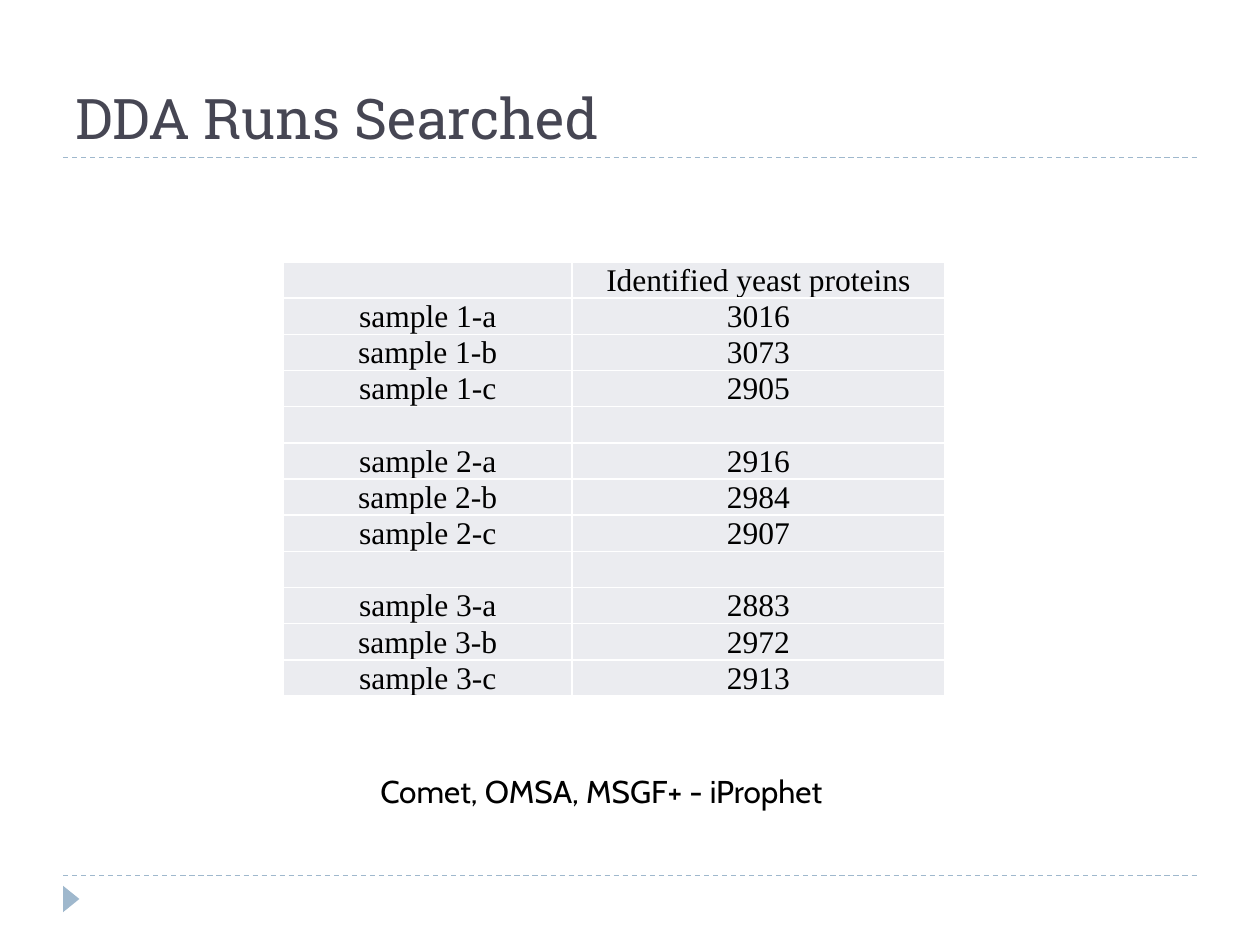
from lxml import etree
from pptx import Presentation
from pptx import util as u
from pptx.dml.color import RGBColor
from pptx.enum import dml, shapes, text
from pptx.oxml.ns import qn

INK = RGBColor(0x00, 0x00, 0x00)
SLATE = RGBColor(0x46, 0x46, 0x53)
MIST = RGBColor(0x9F, 0xB8, 0xCD)
PALE = RGBColor(0xEB, 0xEC, 0xF0)
WIDTH, HEIGHT = u.Inches(10), u.Inches(7.5)
MARGIN = WIDTH * 0.05
BODY_SIZE = u.Pt(18)
TABLE_FONT = "Times New Roman"
PROTEIN_COUNTS = [(3016, 3073, 2905), (2916, 2984, 2907), (2883, 2972, 2913)]


def style(paragraph, font_name, size, color):
    """Format every run of a paragraph."""
    for run in paragraph.runs:
        run.font.name, run.font.size = font_name, size
        run.font.color.rgb = color


def place(part, box):
    """Move a part to a left, top, width, height box."""
    part.left, part.top, part.width, part.height = map(int, box)


def add_rule(slide, left, top, width):
    """Draw a dashed horizontal rule."""
    rule = slide.shapes.add_connector(
        shapes.MSO_CONNECTOR.STRAIGHT, int(left), int(top), int(left + width), int(top))
    rule.line.color.rgb = MIST
    rule.line.width = u.Pt(0.75)
    rule.line.dash_style = dml.MSO_LINE.DASH
    etree.SubElement(rule._element.spPr, qn("a:effectLst"))


def add_header(slide, box):
    """Fill the title and underline its box."""
    left, top, width, height = box
    add_rule(slide, left, top + height, width)
    title = slide.shapes.title
    place(title, box)
    frame = title.text_frame
    frame.text = "DDA Runs Searched"
    frame.vertical_anchor = text.MSO_ANCHOR.BOTTOM
    heading = frame.paragraphs[0]
    heading.alignment = text.PP_ALIGN.LEFT
    style(heading, "Roboto Slab", u.Pt(32), SLATE)


def add_footer(slide, box):
    """Draw the footer rule with the arrow marker below its left end."""
    left, top, width, height = box
    add_rule(slide, left, top, width)
    length, depth = u.Inches(0.21), u.Inches(0.13)
    marker = slide.shapes.add_shape(
        shapes.MSO_SHAPE.ISOSCELES_TRIANGLE, int(left + (depth - length) / 2),
        int(top + (height - depth) / 2), length, depth)
    marker.rotation = 90
    marker.shadow.inherit = False
    marker.fill.solid()
    marker.fill.fore_color.rgb = MIST
    marker.line.fill.background()


def protein_rows():
    """List the table rows, with a blank row between samples."""
    rows = [("", "Identified yeast proteins")]
    for number, counts in enumerate(PROTEIN_COUNTS, 1):
        if number > 1:
            rows.append(("", ""))
        rows += [(f"sample {number}-{run}", str(count)) for run, count in zip("abc", counts)]
    return rows


def fill_cell(cell, wording):
    """Write one centred table cell."""
    cell.fill.solid()
    cell.fill.fore_color.rgb = PALE
    cell.margin_left = cell.margin_right = cell.margin_top = u.Inches(0.01)
    cell.margin_bottom = 0
    cell.vertical_anchor = text.MSO_ANCHOR.MIDDLE
    paragraph = cell.text_frame.paragraphs[0]
    paragraph.text = wording
    paragraph.alignment = text.PP_ALIGN.CENTER
    style(paragraph, TABLE_FONT, BODY_SIZE, INK)
    if not wording:
        ending = etree.SubElement(paragraph._p, qn("a:endParaRPr"), sz=str(BODY_SIZE.centipoints))
        etree.SubElement(ending, qn("a:latin"), typeface=TABLE_FONT)


def add_protein_table(slide, box):
    """Build the table of identified proteins per sample."""
    rows = protein_rows()
    table = slide.shapes.add_table(len(rows), 2, *map(int, box)).table
    table.first_row = table.horz_banding = False
    sample_column, protein_column = table.columns
    sample_column.width = u.Inches(2.29)
    protein_column.width = int(box[2]) - sample_column.width
    for row, wordings in zip(table.rows, rows):
        for cell, wording in zip(row.cells, wordings):
            fill_cell(cell, wording)


def add_search_note(slide, box):
    """Name the search engines below the table."""
    frame = slide.shapes.add_textbox(*map(int, box)).text_frame
    frame.word_wrap = False
    frame.auto_size = text.MSO_AUTO_SIZE.SHAPE_TO_FIT_TEXT
    frame.text = "Comet, OMSA, MSGF+ - iProphet"
    style(frame.paragraphs[0], "Cabin", BODY_SIZE, INK)


def main():
    """Build and save the slide."""
    deck = Presentation()
    deck.slide_width, deck.slide_height = WIDTH, HEIGHT
    slide = deck.slides.add_slide(deck.slide_layouts[5])
    inner = WIDTH - 2 * MARGIN
    add_footer(slide, (MARGIN, u.Inches(6.95), inner, u.Inches(0.37)))
    add_header(slide, (MARGIN, u.Inches(0.17), inner, u.Inches(1.08)))
    add_protein_table(slide, (u.Inches(2.25), u.Inches(2.08), u.Inches(5.25), u.Inches(3.44)))
    add_search_note(slide, (u.Inches(2.92), u.Inches(6.08), u.Inches(3.74), u.Inches(0.4)))
    deck.save("out.pptx")


if __name__ == "__main__":
    main()
